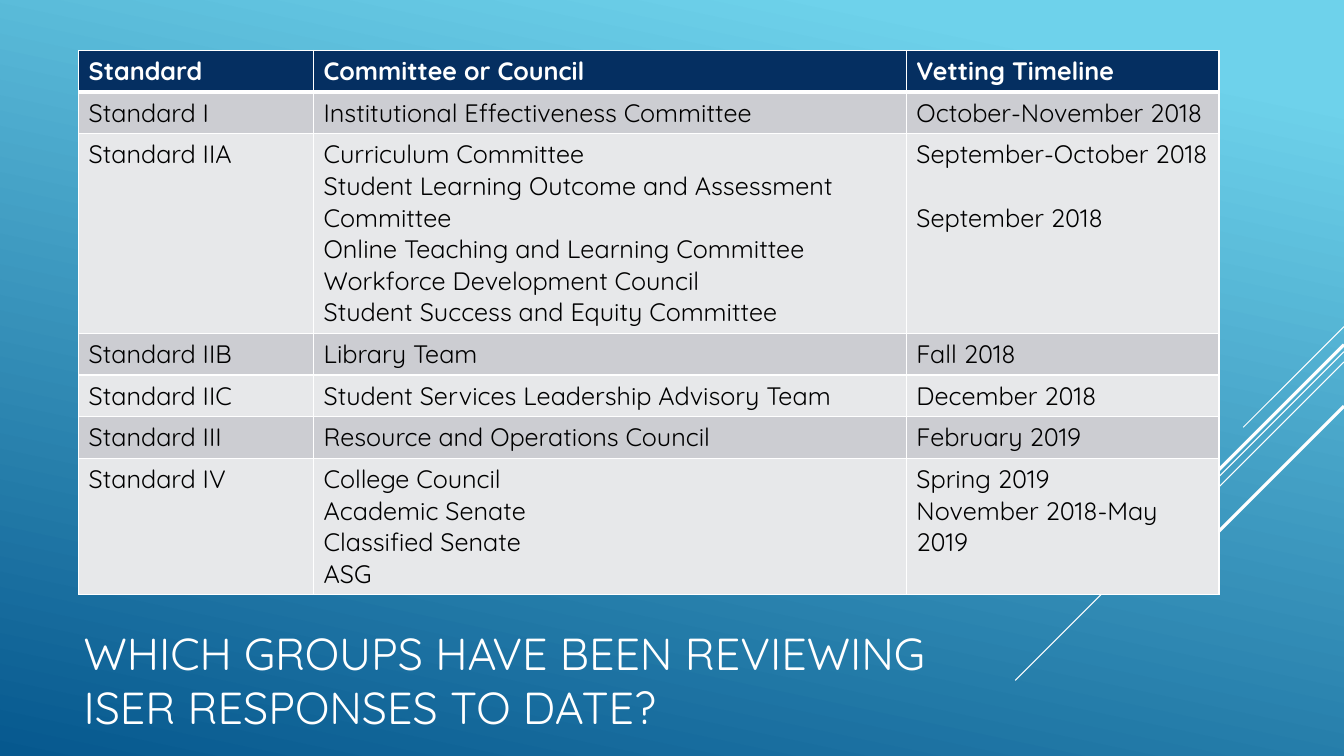
from dataclasses import dataclass

from lxml import etree
from pptx import Presentation
from pptx import util as u
from pptx.dml.color import RGBColor
from pptx.enum import shapes, text
from pptx.oxml import ns


@dataclass(frozen=True)
class Theme:
    font: str = "Quicksand"
    title_size: int = 32
    table_size: int = 18
    sky: str = "6ED2EB"
    deep: str = "06588E"
    navy: str = "052F61"
    bands: tuple[str, str] = ("CCCDD2", "E7E8EA")
    white: str = "FFFFFF"
    black: str = "000000"


@dataclass(frozen=True)
class Ray:
    """A 45-degree line running down and left from the right edge."""
    top: float    # percent of slide height
    run: float    # percent of slide width
    weight: float


@dataclass(frozen=True)
class Standard:
    name: str
    groups: tuple[str, ...]
    dates: tuple[str, ...]
    lines: int = 1
    date_gap: float = 0  # points before each later date


THEME = Theme()
WIDTH, HEIGHT = u.Inches(13.33), u.Inches(7.5)

RAYS = [
    Ray(43.2, 7.5, 0.75),
    Ray(46.53, 24.46, 0.75),
    Ray(47.87, 15.53, 0.75),
    Ray(45.6, 14.33, 2.25),
    Ray(53.73, 10.43, 2.25),
]

COLUMNS = [17.48, 44.11, 23.26]  # percent of slide width
LINE, PADDING = 4.18, 1.33       # percent of slide height

ROWS = [
    Standard("Standard", ("Committee or Council",), ("Vetting Timeline",)),
    Standard("Standard I", ("Institutional Effectiveness Committee",),
             ("October-November 2018",)),
    Standard("Standard IIA",
             ("Curriculum Committee",
              "Student Learning Outcome and Assessment Committee",
              "Online Teaching and Learning Committee",
              "Workforce Development Council",
              "Student Success and Equity Committee"),
             ("September-October 2018", "September 2018"),
             lines=6, date_gap=22.5),
    Standard("Standard IIB", ("Library Team",), ("Fall 2018",)),
    Standard("Standard IIC", ("Student Services Leadership Advisory Team",),
             ("December 2018",)),
    Standard("Standard III", ("Resource and Operations Council",),
             ("February 2019",)),
    Standard("Standard IV",
             ("College Council", "Academic Senate", "Classified Senate", "ASG"),
             ("Spring 2019", "November 2018-May 2019"), lines=4),
]


def across(percent: float) -> u.Emu:
    return u.Emu(round(WIDTH * percent / 100))


def down(percent: float) -> u.Emu:
    return u.Emu(round(HEIGHT * percent / 100))


def style(p, size: float, color: str, bold: bool = False) -> None:
    p.font.name, p.font.size, p.font.bold = THEME.font, u.Pt(size), bold
    p.font.color.rgb = RGBColor.from_string(color)


def paint_background(s) -> None:
    fill = s.background.fill
    fill.gradient()
    fill.gradient_angle = 360 - 102
    stops = ((0.1, THEME.sky), (1, THEME.deep))
    for stop, (position, color) in zip(fill.gradient_stops, stops):
        stop.position = position
        stop.color.rgb = RGBColor.from_string(color)


def draw_ray(s, ray: Ray) -> None:
    run, top = across(ray.run), down(ray.top)
    sp = s.shapes.add_connector(shapes.MSO_CONNECTOR.STRAIGHT,
                                WIDTH, top, WIDTH - run, top + run)
    sp.line.color.rgb = RGBColor.from_string(THEME.white)
    sp.line.width = u.Pt(ray.weight)
    etree.SubElement(sp.element.spPr, ns.qn("a:effectLst"))


def draw_title(s, title: str) -> None:
    sp = s.shapes.add_textbox(across(5.48), down(82), across(70), down(15.87))
    tf = sp.text_frame
    tf.word_wrap = True
    tf.vertical_anchor = text.MSO_ANCHOR.MIDDLE
    p = tf.paragraphs[0]
    p.text = title
    style(p, THEME.title_size, THEME.white)


def set_borders(cell, top: float, bottom: float) -> None:
    tc_pr = cell._tc.get_or_add_tcPr()
    for i, (side, weight) in enumerate(zip("LRTB", (1, 1, top, bottom))):
        ln = etree.Element(ns.qn(f"a:ln{side}"), w=str(u.Pt(weight)))
        fill = etree.SubElement(ln, ns.qn("a:solidFill"))
        etree.SubElement(fill, ns.qn("a:srgbClr"), val=THEME.white)
        tc_pr.insert(i, ln)


def fill_cell(cell, entries: tuple[str, ...], row: int, gap: float) -> None:
    header = row == 0
    cell.fill.solid()
    cell.fill.fore_color.rgb = RGBColor.from_string(
        THEME.navy if header else THEME.bands[(row - 1) % 2])
    set_borders(cell, 3 if row == 1 else 1, 3 if header else 1)
    tf = cell.text_frame
    for i, entry in enumerate(entries):
        p = tf.add_paragraph() if i else tf.paragraphs[0]
        p.text = entry
        style(p, THEME.table_size, THEME.white if header else THEME.black, header)
        if i and gap:
            p.space_before = u.Pt(gap)


def draw_table(s) -> None:
    heights = [PADDING + LINE * row.lines for row in ROWS]
    table = s.shapes.add_table(
        len(ROWS), len(COLUMNS), across(5.85), down(6.67),
        across(sum(COLUMNS)), down(sum(heights))).table
    table.horz_banding = False
    for column, width in zip(table.columns, COLUMNS):
        column.width = across(width)
    for i, (row, height) in enumerate(zip(ROWS, heights)):
        table.rows[i].height = down(height)
        for j, entries in enumerate(((row.name,), row.groups, row.dates)):
            fill_cell(table.cell(i, j), entries, i, row.date_gap if j == 2 else 0)


def main() -> None:
    prs = Presentation()
    prs.slide_width, prs.slide_height = WIDTH, HEIGHT
    s = prs.slides.add_slide(prs.slide_layouts[6])

    # Backdrop
    paint_background(s)
    for ray in RAYS:
        draw_ray(s, ray)

    # Content
    draw_title(s, "WHICH GROUPS HAVE BEEN REVIEWING ISER RESPONSES TO DATE?")
    draw_table(s)

    prs.save("out.pptx")


if __name__ == "__main__":
    main()
